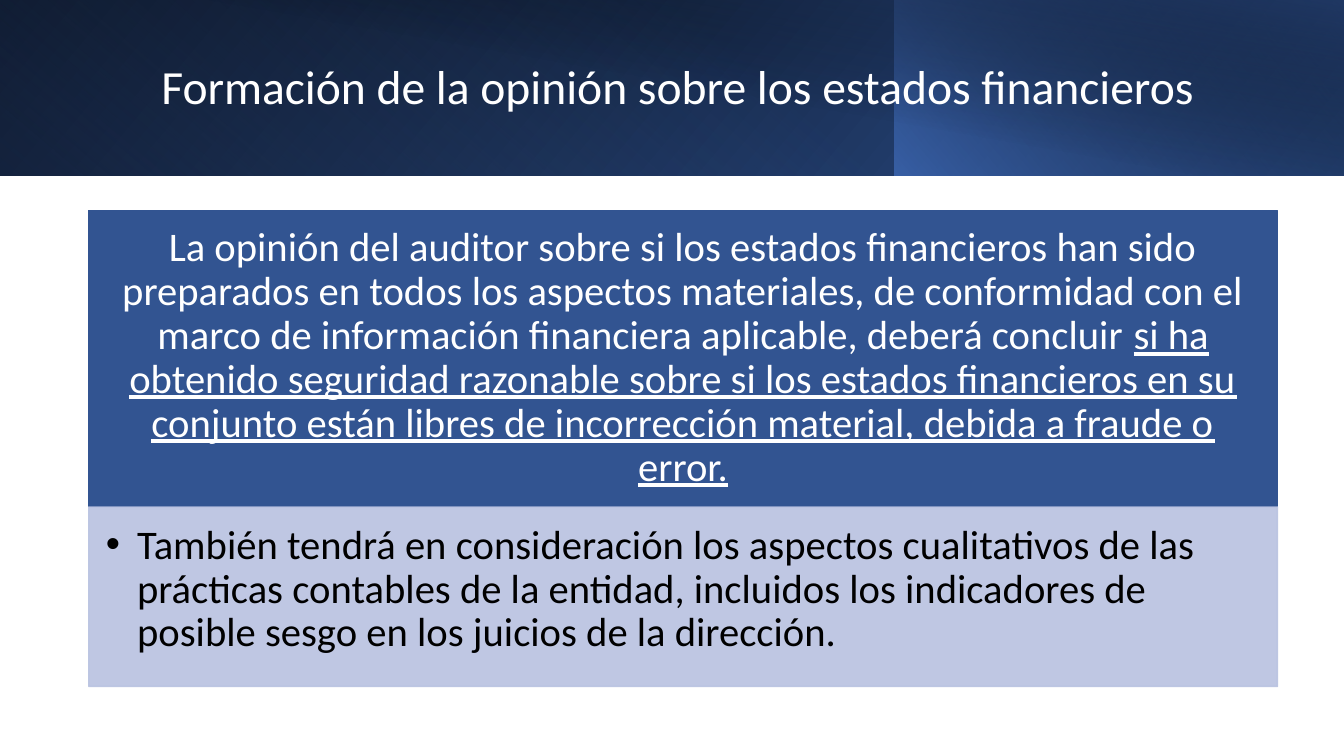
"""Build the slide on forming the auditor's opinion."""
import pptx
import pptx.util
import pptx.dml.color
import pptx.enum.shapes
import pptx.enum.text
import pptx.oxml
import pptx.oxml.ns

RGB = pptx.dml.color.RGBColor
ALIGN = pptx.enum.text.PP_ALIGN
ANCHOR = pptx.enum.text.MSO_ANCHOR
RECT = pptx.enum.shapes.MSO_SHAPE.RECTANGLE
inch = pptx.util.Inches

BLACK = RGB(0, 0, 0)
WHITE = RGB(255, 255, 255)
NAVY = RGB(0x20, 0x38, 0x64)
ROYAL = RGB(0x2F, 0x55, 0x97)
BLUE = RGB(0x44, 0x72, 0xC4)
DARK = RGB(0x32, 0x54, 0x91)
PALE = RGB(0xB9, 0xC2, 0xE1)

TITLE = "Formación de la opinión sobre los estados financieros"
LEAD = [
    ("La opinión del auditor sobre si los estados financieros han sido preparados en todos los "
     "aspectos materiales, de conformidad con el marco de información financiera aplicable, "
     "deberá concluir ", False),
    ("si ha obtenido seguridad razonable sobre si los estados financieros en su conjunto están "
     "libres de incorrección material, debida a fraude o error.", True),
]
NOTE = ("También tendrá en consideración los aspectos cualitativos de las prácticas contables de la "
        "entidad, incluidos los indicadores de posible sesgo en los juicios de la dirección.")

WIDE, HIGH = 13.33, 7.5
BAND = 1.74
SPLIT = 8.87
LEFT, TOP, SPAN = 0.88, 2.09, 11.79
LEAD_H, NOTE_H = 2.93, 1.78

BARS = [
    (0, WIDE, 0, True, 140, [(0, BLACK, 100), (100, ROYAL, 100)]),
    (0, SPLIT, 180, True, 230, [(20, BLUE, 0), (100, NAVY, 55)]),
    (SPLIT, WIDE - SPLIT, 0, True, 220, [(0, BLUE, 66), (100, BLACK, 30)]),
    (0.5, WIDE - 0.5, 0, False, 280, [(50, BLACK, 0), (99, NAVY, 52)]),
]


def place(shape, x, y, w, h):
    shape.left, shape.top, shape.width, shape.height = map(inch, (x, y, w, h))


def add_bar(slide, x, w, turn, flip, angle, stops):
    bar = slide.shapes.add_shape(RECT, inch(x), 0, inch(w), inch(BAND))
    bar.shadow.inherit = False
    bar.line.fill.background()
    bar.rotation = turn
    props = bar._element.spPr
    if flip:
        props.find(pptx.oxml.ns.qn("a:xfrm")).set("flipH", "1")
    marks = "".join(
        f'<a:gs pos="{pos * 1000}"><a:srgbClr val="{color}">'
        f'<a:alpha val="{alpha * 1000}"/></a:srgbClr></a:gs>'
        for pos, color, alpha in stops)
    fill = pptx.oxml.parse_xml(
        f'<a:gradFill {pptx.oxml.ns.nsdecls("a")} rotWithShape="1"><a:gsLst>{marks}</a:gsLst>'
        f'<a:lin ang="{angle * 60000}" scaled="0"/></a:gradFill>')
    props.find(pptx.oxml.ns.qn("a:prstGeom")).addnext(fill)


def paint(shape, color, alpha=100):
    shape.fill.solid()
    shape.fill.fore_color.rgb = color
    shape.line.fill.solid()
    shape.line.color.rgb = color
    shape.line.width = pptx.util.Pt(1)
    for tint in shape._element.spPr.iter(pptx.oxml.ns.qn("a:srgbClr")):
        pptx.oxml.ns.qn("a:alpha")
        tint.append(pptx.oxml.parse_xml(
            f'<a:alpha {pptx.oxml.ns.nsdecls("a")} val="{alpha * 1000}"/>'))


def write(shape, runs, size=29, color=WHITE, align=ALIGN.LEFT, anchor=ANCHOR.MIDDLE,
          inset=(0.1, 0.05, 0.1, 0.05)):
    frame = shape.text_frame
    frame.word_wrap = True
    frame.auto_size = pptx.enum.text.MSO_AUTO_SIZE.NONE
    frame.vertical_anchor = anchor
    (frame.margin_left, frame.margin_top,
     frame.margin_right, frame.margin_bottom) = map(inch, inset)
    para = frame.paragraphs[0]
    para.alignment = align
    para.line_spacing = 0.9
    para.space_before = pptx.util.Pt(0)
    for text, under in runs:
        run = para.add_run()
        run.text = text
        run.font.name = "Calibri"
        run.font.size = pptx.util.Pt(size)
        run.font.color.rgb = color
        if under:
            run.font.underline = True
    return para


def main():
    deck = pptx.Presentation()
    deck.slide_width, deck.slide_height = inch(WIDE), inch(HIGH)
    slide = deck.slides.add_slide(deck.slide_layouts[1])
    title, note = slide.placeholders
    for bar in BARS:
        add_bar(slide, *bar)

    place(title, 1.5, 0.32, 10.82, 1.13)
    write(title, [(TITLE, False)], size=34)

    lead = slide.shapes.add_shape(RECT, 0, 0, 0, 0)
    lead.shadow.inherit = False
    place(lead, LEFT, TOP, SPAN, LEAD_H)
    paint(lead, DARK)
    write(lead, LEAD, align=ALIGN.CENTER, inset=(0.23, 0.13, 0.23, 0.13))

    place(note, LEFT, TOP + LEAD_H + 0.01, SPAN, NOTE_H)
    paint(note, PALE, alpha=90)
    para = write(note, [(NOTE, False)], color=BLACK, anchor=ANCHOR.TOP,
                 inset=(0.17, 0.17, 0.23, 0.25))
    props = para._p.get_or_add_pPr()
    props.set("marL", str(inch(0.31)))
    props.set("indent", str(-inch(0.31)))

    for shape in (title, lead, note):
        slide.shapes._spTree.append(shape._element)
    deck.save("out.pptx")


if __name__ == "__main__":
    main()
